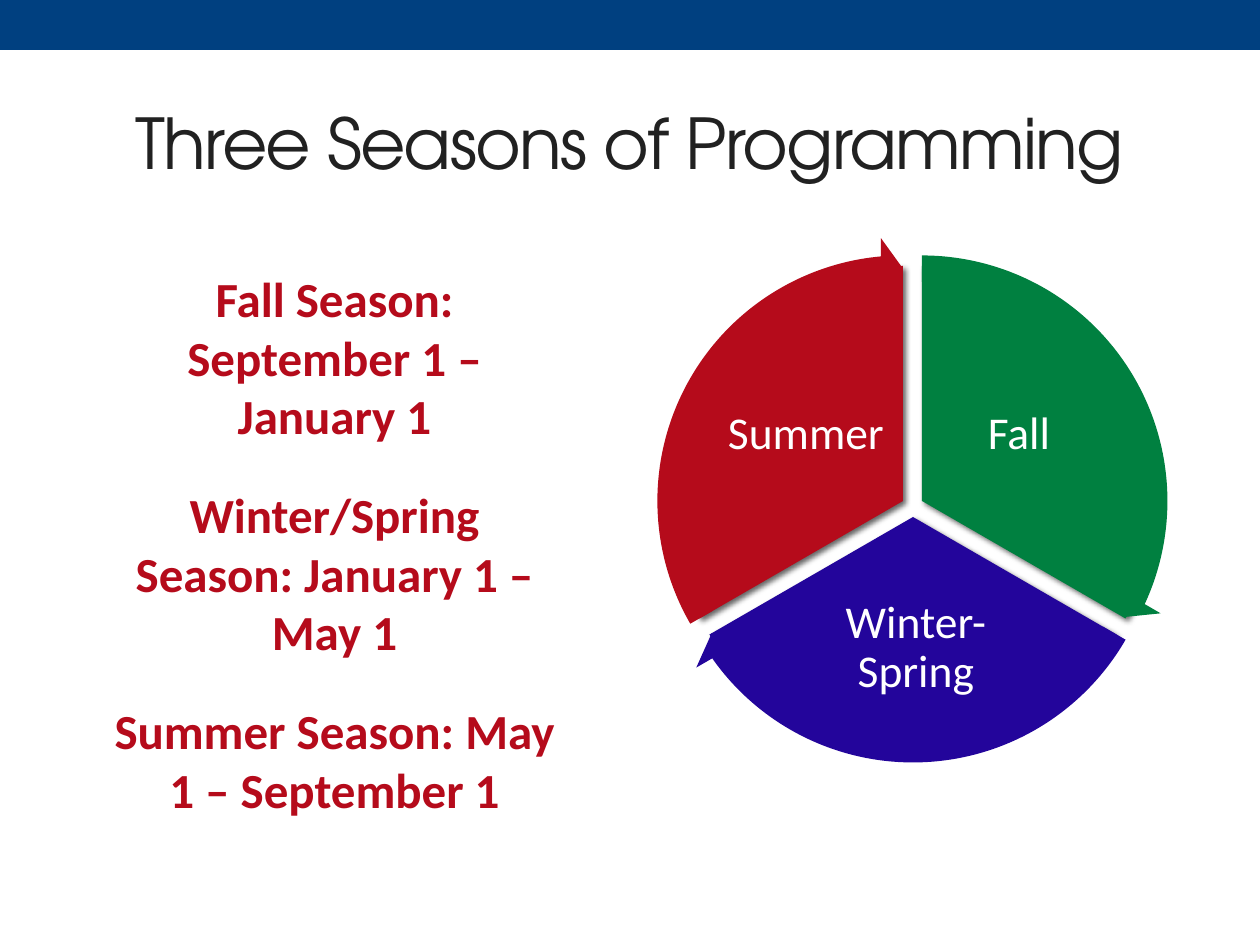
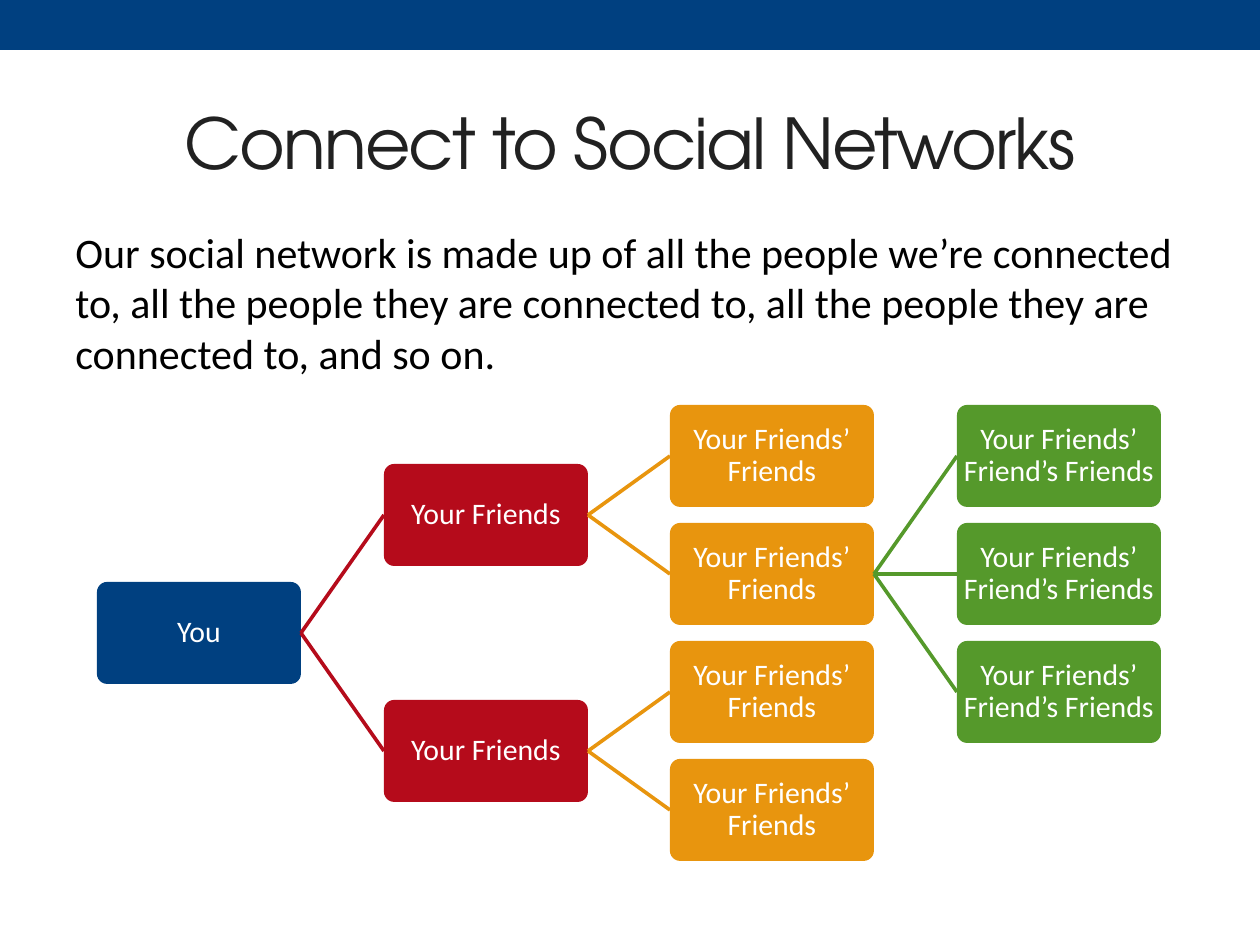
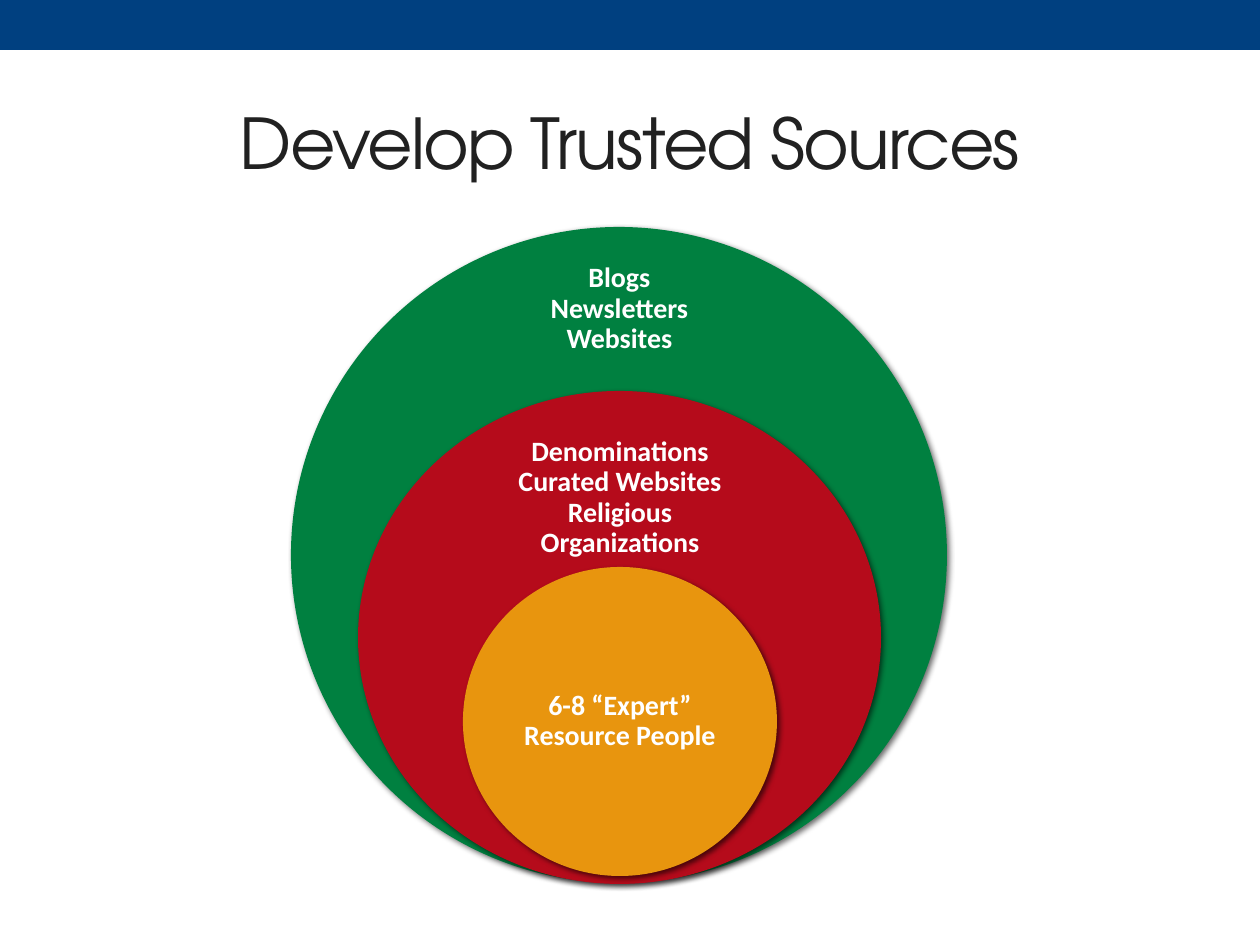
"""Build three slides on programming seasons, social networks and trusted sources."""
from lxml.etree import SubElement
from pptx import Presentation
from pptx.dml.color import RGBColor
from pptx.enum.shapes import MSO_CONNECTOR, MSO_SHAPE
from pptx.enum.text import MSO_ANCHOR, PP_ALIGN
from pptx.oxml.ns import qn
from pptx.util import Pt

PX = 914400 / 126
COLOURS = {
    "navy": "004080", "title": "212121", "black": "000000", "white": "FFFFFF",
    "red": "B50B1B", "green": "008040", "violet": "23059B",
    "orange": "E8950E", "leaf": "55992B",
}


def add_figure(slide, kind, box, colour=None, shadow=False, adjustments=()):
    """Add a borderless preset shape, or a text box when kind is None."""
    lengths = [round(length * PX) for length in box]
    if kind is None:
        return slide.shapes.add_textbox(*lengths)
    shape = slide.shapes.add_shape(kind, *lengths)
    shape.fill.solid()
    shape.fill.fore_color.rgb = RGBColor.from_string(COLOURS[colour])
    shape.line.fill.background()
    shape.shadow.inherit = False
    for index, value in enumerate(adjustments):
        shape.adjustments[index] = value
    if shadow:
        effects = shape._element.spPr.find(qn("a:effectLst"))
        outer = SubElement(effects, qn("a:outerShdw"), blurRad="38100", dist="25400",
                           dir="2700000", rotWithShape="0")
        tint = SubElement(outer, qn("a:srgbClr"), val=COLOURS["black"])
        SubElement(tint, qn("a:alpha"), val="60000")
    return shape


def write(shape, text, size, colour="white", font="Calibri", bold=False, centred=True,
          middle=True, inset=None, line_spacing=None, gap=0, tracking=None):
    """Fill a shape with text, one paragraph per line, in a single format."""
    frame = shape.text_frame
    frame.word_wrap = True
    frame.vertical_anchor = MSO_ANCHOR.MIDDLE if middle else MSO_ANCHOR.TOP
    if inset is not None:
        frame.margin_left = frame.margin_right = round(inset * PX)
        frame.margin_top = frame.margin_bottom = round(inset * PX)
    frame.text = text
    for index, paragraph in enumerate(frame.paragraphs):
        paragraph.alignment = PP_ALIGN.CENTER if centred else PP_ALIGN.LEFT
        if line_spacing:
            paragraph.line_spacing = line_spacing
        if index and gap:
            paragraph.space_before = Pt(gap)
        for run in paragraph.runs:
            run.font.size = Pt(size)
            run.font.name = font
            run.font.bold = bold
            run.font.color.rgb = RGBColor.from_string(COLOURS[colour])
            if tracking:
                run._r.get_or_add_rPr().set("spc", str(tracking))


presentation = Presentation()
presentation.slide_width = round(1260 * PX)
presentation.slide_height = round(945 * PX)

slides = []
for title in ("Three Seasons of Programming", "Connect to Social Networks",
              "Develop Trusted Sources"):
    slide = presentation.slides.add_slide(presentation.slide_layouts[6])
    add_figure(slide, MSO_SHAPE.RECTANGLE, (0, 0, 1260, 50), "navy")
    write(add_figure(slide, None, (63, 73, 1134, 136)), title, size=40, colour="title",
          font="TeX Gyre Adventor", tracking=-100)
    slides.append(slide)
seasons_slide, network_slide, sources_slide = slides

season_dates = "\n".join((
    "Fall Season: September 1 – January 1",
    "Winter/Spring Season: January 1 – May 1",
    "Summer Season: May 1 – September 1",
))
write(add_figure(seasons_slide, None, (94, 262, 481, 503)), season_dates, size=28,
      colour="red", bold=True, middle=False, gap=22.6)

PIE_SIZE, ARROW_MARGIN = 470, 29
ARROW_SIZE = PIE_SIZE + 2 * ARROW_MARGIN
seasons = [
    ("Fall", "green", 687, 266, (162, 18), (14.73, 161.99), (935, 365, 168, 140)),
    ("Winter-Spring", "violet", 678, 282, (18, 90), (86.72, 18), (790, 587, 252, 123)),
    ("Summer", "red", 668, 266, (90, 162), (158.73, 90), (722, 365, 168, 140)),
]
for name, colour, left, top, pie_angles, arrow_angles, label_box in seasons:
    add_figure(seasons_slide, MSO_SHAPE.PIE, (left, top, PIE_SIZE, PIE_SIZE), colour,
               shadow=True, adjustments=pie_angles)
    write(add_figure(seasons_slide, None, label_box), name, size=26, inset=5,
          line_spacing=0.9)
for name, colour, left, top, pie_angles, arrow_angles, label_box in seasons:
    add_figure(seasons_slide, MSO_SHAPE.CIRCULAR_ARROW,
               (left - ARROW_MARGIN, top - ARROW_MARGIN, ARROW_SIZE, ARROW_SIZE), colour,
               adjustments=(0.05, 3.28, *arrow_angles, 0.06))

network_text = ("Our social network is made up of all the people we’re connected to, "
                "all the people they are connected to, all the people they are "
                "connected to, and so on.")
write(add_figure(network_slide, None, (63, 220, 1134, 672)), network_text, size=24,
      colour="black", centred=False, middle=False)

NODE_WIDTH, NODE_HEIGHT, ROW_TOP, ROW_PITCH = 204, 102, 405, 118
levels = [
    ("You", "navy", 97, [(1.5, None)]),
    ("Your Friends", "red", 384, [(0.5, 1.5), (2.5, 1.5)]),
    ("Your Friends’ Friends", "orange", 670, [(0, 0.5), (1, 0.5), (2, 2.5), (3, 2.5)]),
    ("Your Friends’ Friend’s Friends", "leaf", 957, [(0, 1), (1, 1), (2, 1)]),
]
parent_right = 0
for label, colour, left, nodes in levels:
    for row, parent_row in nodes:
        top = ROW_TOP + row * ROW_PITCH
        if parent_row is not None:
            middle = top + NODE_HEIGHT / 2
            parent_middle = middle + (parent_row - row) * ROW_PITCH
            ends = [round(length * PX) for length in (parent_right, parent_middle, left, middle)]
            link = network_slide.shapes.add_connector(MSO_CONNECTOR.STRAIGHT, *ends)
            link.line.color.rgb = RGBColor.from_string(COLOURS[colour])
            link.line.width = Pt(2.08)
            SubElement(link._element.spPr, qn("a:effectLst"))
        node = add_figure(network_slide, MSO_SHAPE.ROUNDED_RECTANGLE,
                          (left, top, NODE_WIDTH, NODE_HEIGHT), colour, adjustments=(0.1,))
        write(node, label, size=17, inset=1, line_spacing=0.9)
    parent_right = left + NODE_WIDTH

circles = [
    ("Blogs\vNewsletters Websites", "green", (291, 227, 656, 656), (505, 247, 229, 124)),
    ("Denominations Curated Websites Religious Organizations", "red",
     (358, 391, 523, 493), (498, 420, 244, 156)),
    ("6-8 “Expert” Resource People", "orange", (463, 567, 314, 309), (509, 644, 222, 155)),
]
for label, colour, circle_box, label_box in circles:
    add_figure(sources_slide, MSO_SHAPE.OVAL, circle_box, colour, shadow=True)
    write(add_figure(sources_slide, None, label_box), label, size=16, bold=True, inset=15,
          line_spacing=0.9)

presentation.save("out.pptx")
